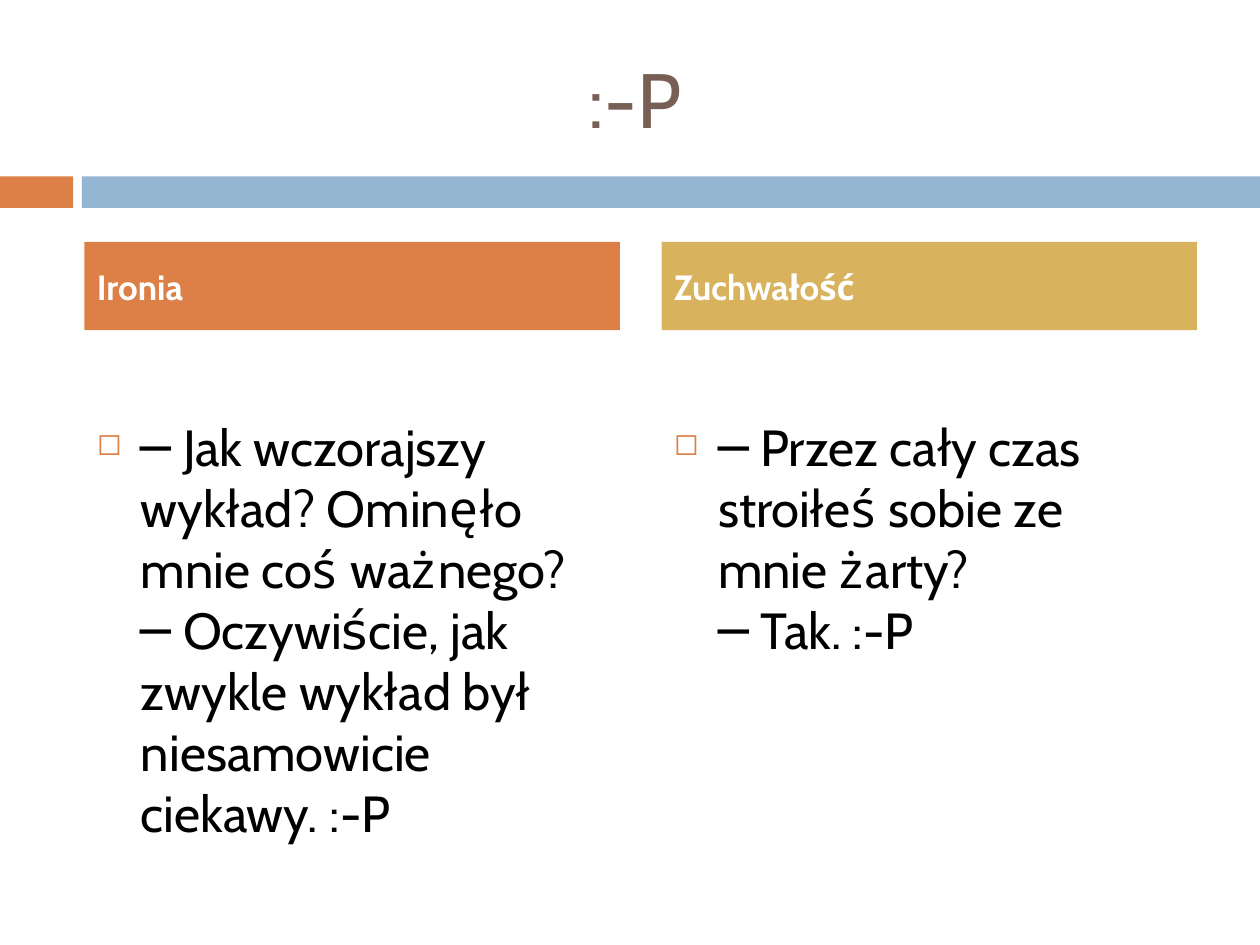
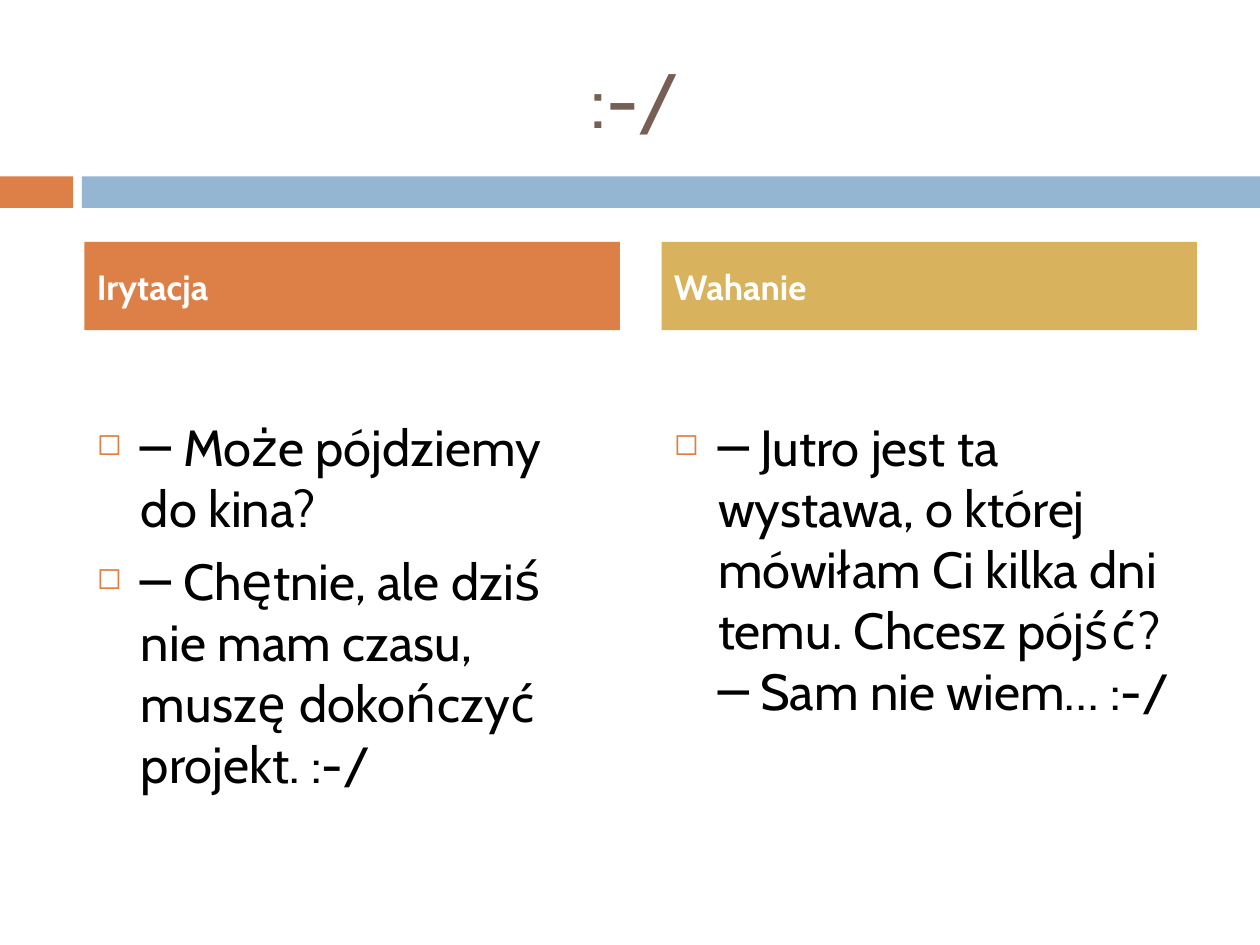
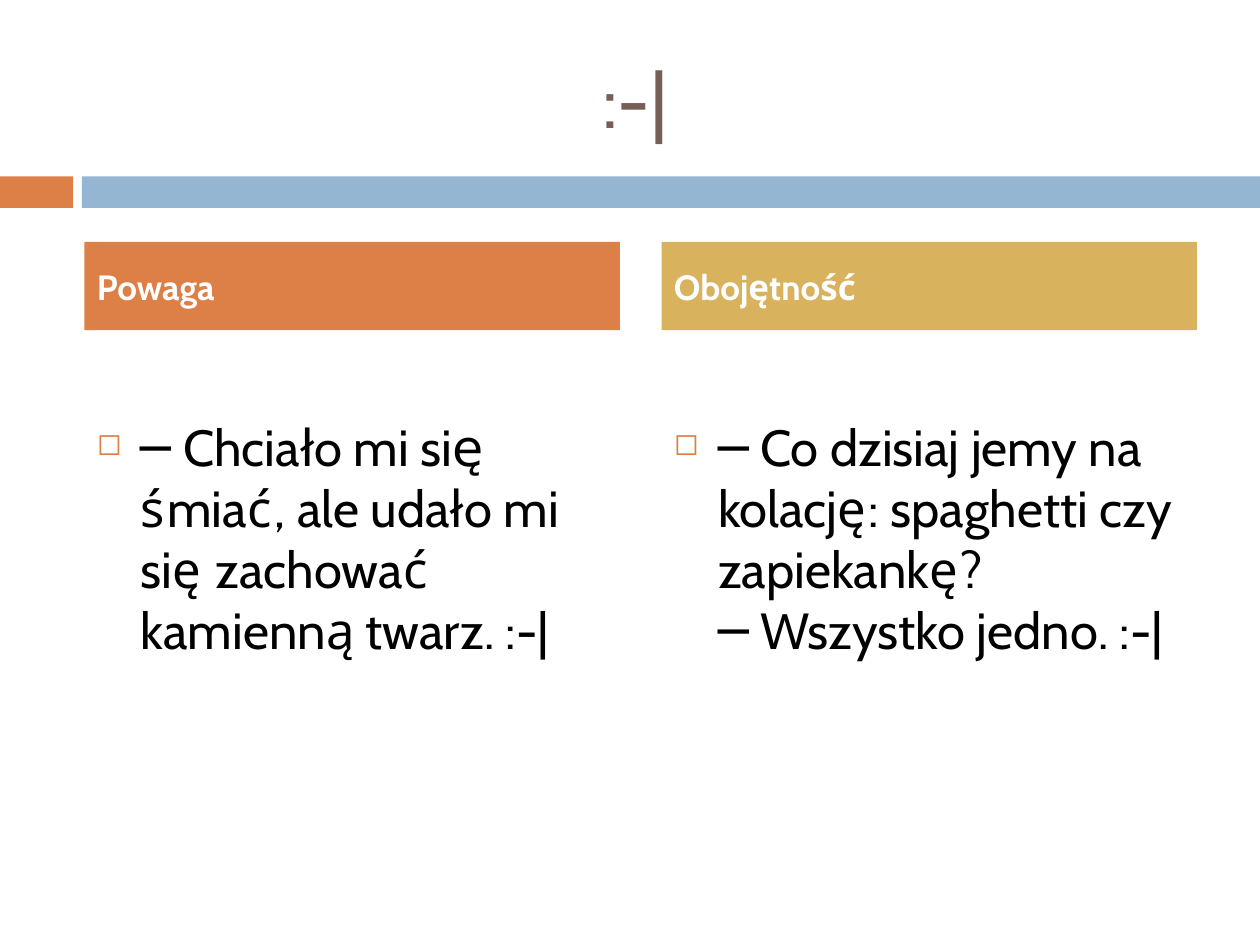
from dataclasses import dataclass

from lxml.etree import SubElement
from pptx import Presentation
from pptx.dml.color import RGBColor
from pptx.enum.shapes import MSO_SHAPE
from pptx.enum.text import MSO_ANCHOR, MSO_AUTO_SIZE, PP_ALIGN
from pptx.oxml.ns import qn
from pptx.util import Inches, Pt

# Shared look
FONT = "Cabin"
ORANGE, BLUE, GOLD = "DD8047", "94B6D2", "D8B25C"
BROWN, BLACK, WHITE = "775F55", "000000", "FFFFFF"
LEFT, WIDTH, STEP = 0.67, 4.25, 4.58
INDENT = Inches(0.35)


@dataclass
class Column:
    head: str
    lines: list[str]


@dataclass
class Page:
    title: str
    columns: list[Column]


PAGES = [
    Page(":-P", [
        Column("Ironia", [
            "─ Jak wczorajszy wykład? Ominęło mnie coś ważnego?\n"
            "─ Oczywiście, jak zwykle wykład był niesamowicie ciekawy. :-P"]),
        Column("Zuchwałość", [
            "─ Przez cały czas stroiłeś sobie ze mnie żarty?\n─ Tak. :-P"]),
    ]),
    Page(":-/", [
        Column("Irytacja", [
            "─ Może pójdziemy do kina?",
            "─ Chętnie, ale dziś nie mam czasu, muszę dokończyć projekt. :-/"]),
        Column("Wahanie", [
            "─ Jutro jest ta wystawa, o której mówiłam Ci kilka dni temu. "
            "Chcesz pójść?\n─ Sam nie wiem… :-/"]),
    ]),
    Page(":-|", [
        Column("Powaga", [
            "─ Chciało mi się śmiać, ale udało mi się zachować "
            "kamienną twarz. :-|"]),
        Column("Obojętność", [
            "─ Co dzisiaj jemy na kolację: spaghetti czy zapiekankę?\n"
            "─ Wszystko jedno. :-|"]),
    ]),
]


def color(code: str) -> RGBColor:
    return RGBColor.from_string(code)


def style(para, size: int, code: str, bold: bool = False) -> None:
    for run in para.runs:
        font = run.font
        font.name, font.size, font.bold = FONT, Pt(size), bold
        font.color.rgb = color(code)


def add_rect(slide, left: float, top: float, width: float, height: float,
             code: str):
    rect = slide.shapes.add_shape(MSO_SHAPE.RECTANGLE, Inches(left),
                                  Inches(top), Inches(width), Inches(height))
    rect.shadow.inherit = False
    rect.fill.solid()
    rect.fill.fore_color.rgb = color(code)
    rect.line.fill.background()
    return rect


def add_bullet(para) -> None:
    props = para._p.get_or_add_pPr()
    props.set("marL", str(INDENT))
    props.set("indent", str(-INDENT))
    tint = SubElement(props, qn("a:buClr"))
    SubElement(tint, qn("a:srgbClr"), val=ORANGE)
    SubElement(props, qn("a:buSzPct"), val="60000")
    SubElement(props, qn("a:buChar"), char="◻")


def add_title(slide, text: str) -> None:
    title = slide.shapes.title
    title.left, title.top = Inches(0.58), Inches(0.3)
    title.width, title.height = Inches(8.92), Inches(0.95)
    frame = title.text_frame
    frame.text = text
    frame.auto_size = MSO_AUTO_SIZE.NONE
    frame.vertical_anchor = MSO_ANCHOR.MIDDLE
    para = frame.paragraphs[0]
    para.alignment = PP_ALIGN.CENTER
    style(para, 44, BROWN)


def add_head(slide, text: str, left: float, code: str) -> None:
    frame = add_rect(slide, left, 1.92, WIDTH, 0.7, code).text_frame
    frame.text = text
    frame.vertical_anchor = MSO_ANCHOR.MIDDLE
    para = frame.paragraphs[0]
    para.alignment = PP_ALIGN.LEFT
    style(para, 20, WHITE, bold=True)


def add_body(slide, lines: list[str], left: float) -> None:
    box = slide.shapes.add_textbox(Inches(left), Inches(2.67),
                                   Inches(WIDTH), Inches(3.92))
    frame = box.text_frame
    frame.word_wrap = True
    frame.margin_top = Inches(0.63)
    for i, line in enumerate(lines):
        para = frame.add_paragraph() if i else frame.paragraphs[0]
        para.text = line
        para.space_before = Pt(7)
        add_bullet(para)
        style(para, 29, BLACK)


def add_page(deck, page: Page) -> None:
    slide = deck.slides.add_slide(deck.slide_layouts.get_by_name("Title Only"))
    # Bands under the title
    add_rect(slide, 0, 1.4, 0.58, 0.25, ORANGE)
    add_rect(slide, 0.65, 1.4, 9.35, 0.25, BLUE)
    add_title(slide, page.title)
    # Two columns
    for i, (column, code) in enumerate(zip(page.columns, (ORANGE, GOLD))):
        left = LEFT + i * STEP
        add_body(slide, column.lines, left)
        add_head(slide, column.head, left, code)


def main() -> None:
    deck = Presentation()
    deck.slide_width, deck.slide_height = Inches(10), Inches(7.5)
    for page in PAGES:
        add_page(deck, page)
    deck.save("out.pptx")


if __name__ == "__main__":
    main()
